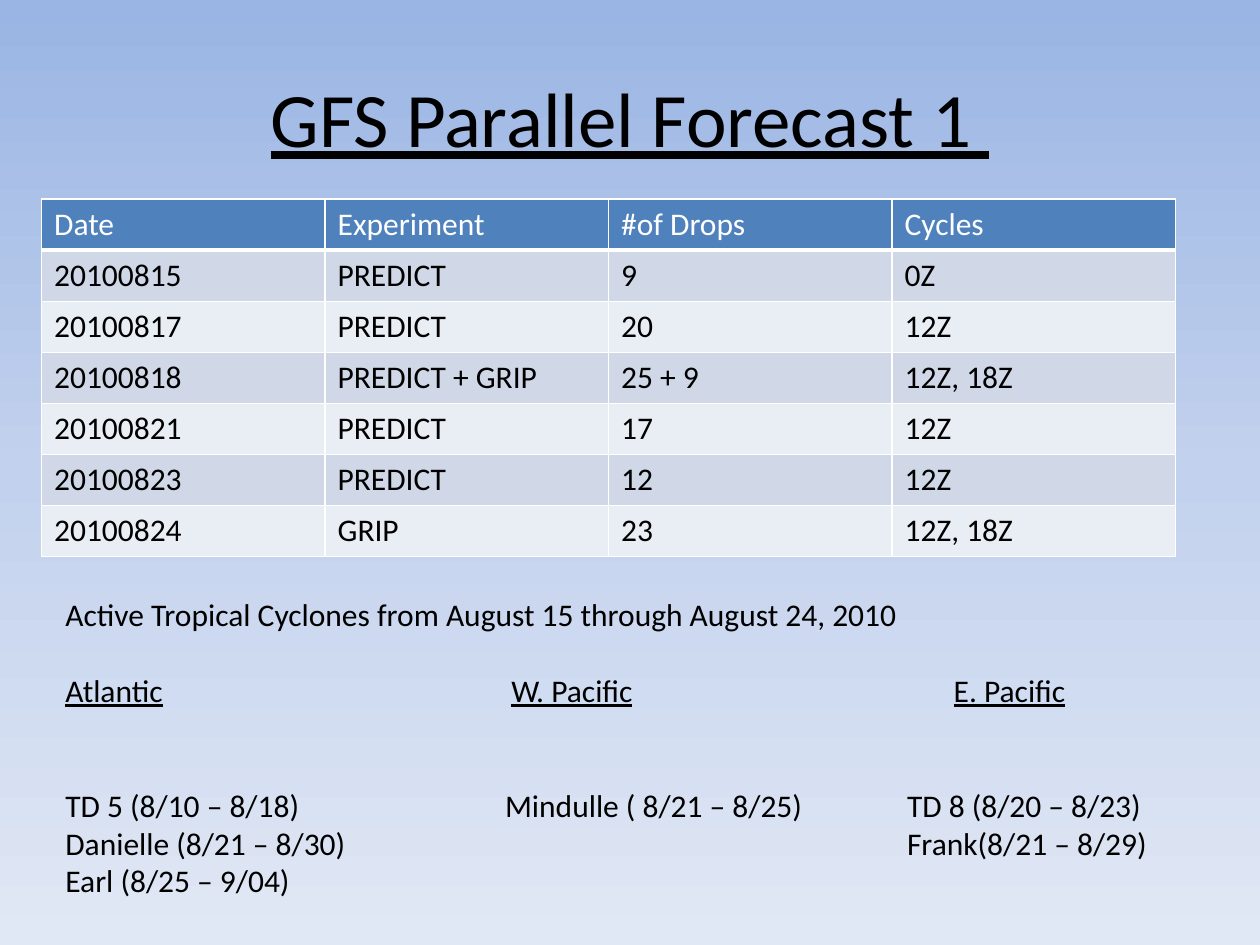
from copy import deepcopy

from lxml.etree import SubElement
from pptx import Presentation
from pptx.dml.color import RGBColor
from pptx.enum.text import MSO_ANCHOR, PP_ALIGN
from pptx.oxml import parse_xml
from pptx.oxml.ns import nsdecls, qn
from pptx.util import Inches, Pt

FONT = "Calibri"
COLORS = {
    "text": "000000", "white": "FFFFFF", "head": "4F81BD",
    "odd": "D0D8E8", "even": "E9EDF4",
}
SKY = [(0, "9AB5E4"), (0.5, "C2D1ED"), (1, "E1E8F5")]
ROWS = [
    ["Date", "Experiment", "#of Drops", "Cycles"],
    ["20100815", "PREDICT", "9", "0Z"],
    ["20100817", "PREDICT", "20", "12Z"],
    ["20100818", "PREDICT + GRIP", "25 + 9", "12Z, 18Z"],
    ["20100821", "PREDICT", "17", "12Z"],
    ["20100823", "PREDICT", "12", "12Z"],
    ["20100824", "GRIP", "23", "12Z, 18Z"],
]
BASINS = ["Atlantic", "W. Pacific", "E. Pacific"]
STORMS = [
    ["TD 5 (8/10 – 8/18)", "Mindulle ( 8/21 – 8/25)", "TD 8 (8/20 – 8/23)"],
    ["Danielle (8/21 – 8/30)", "", "Frank(8/21 – 8/29)"],
    ["Earl (8/25 – 9/04)"],
]
LINE = 22  # height of an 18 pt text line, in points


def add_text(para, text, size=18, color="text", under=False, bold=False):
    run = para.add_run()
    run.text = text
    font = run.font
    font.name, font.size = FONT, Pt(size)
    font.bold, font.underline = bold, under
    font.color.rgb = RGBColor.from_string(COLORS[color])


def add_box(slide, left, top, width, height):
    box = slide.shapes.add_textbox(
        Inches(left), Inches(top), Inches(width), Inches(height))
    box.text_frame.word_wrap = True
    return box.text_frame


def paint_sky(slide):
    fill = slide.background.fill
    fill.gradient()
    fill.gradient_angle = 270
    stops = next(slide.element.iter(qn("a:gsLst")))
    stops.append(deepcopy(stops[-1]))
    for stop, (pos, color) in zip(fill.gradient_stops, SKY):
        stop.position = pos
        stop.color.rgb = RGBColor.from_string(color)


def add_edges(cell, base):
    props = cell._tc.get_or_add_tcPr()
    for i, side in enumerate("LRTB"):
        width = Pt(base if side == "B" else 1)
        props.insert(i, parse_xml(
            f'<a:ln{side} {nsdecls("a")} w="{width}"><a:solidFill>'
            f'<a:srgbClr val="{COLORS["white"]}"/></a:solidFill></a:ln{side}>'))


def add_grid(slide):
    table = slide.shapes.add_table(
        len(ROWS), len(ROWS[0]), Inches(0.33), Inches(1.58),
        Inches(9), Inches(2.84)).table
    for r, row in enumerate(ROWS):
        head = r == 0
        band = "head" if head else "odd" if r % 2 else "even"
        for c, text in enumerate(row):
            cell = table.cell(r, c)
            cell.fill.solid()
            cell.fill.fore_color.rgb = RGBColor.from_string(COLORS[band])
            add_edges(cell, 3 if head else 1)
            add_text(cell.text_frame.paragraphs[0], text,
                     color="white" if head else "text")


def add_row(frame, items, tabs, under=False, gap=0):
    para = frame.add_paragraph()
    para.space_before = Pt(gap)
    stops = SubElement(para._p.get_or_add_pPr(), qn("a:tabLst"))
    for pos in tabs:
        SubElement(stops, qn("a:tab"), pos=str(Inches(pos)), algn="l")
    for i, item in enumerate(items):
        if i:
            add_text(para, "\t")
        if item:
            add_text(para, item, under=under)


def main():
    prs = Presentation()
    prs.slide_width, prs.slide_height = Inches(10), Inches(7.5)
    slide = prs.slides.add_slide(prs.slide_layouts[6])
    paint_sky(slide)

    # Title
    frame = add_box(slide, 0.5, 0.3, 9, 1.25)
    frame.vertical_anchor = MSO_ANCHOR.MIDDLE
    title = frame.paragraphs[0]
    title.alignment = PP_ALIGN.CENTER
    add_text(title, "GFS Parallel Forecast 1 ", size=44, under=True)

    # Drops by date
    add_grid(slide)

    # Storms by basin, in tabbed columns
    frame = add_box(slide, 0.42, 4.67, 8.92, 2.22)
    add_text(frame.paragraphs[0],
             "Active Tropical Cyclones from August 15 through August 24, 2010")
    add_row(frame, BASINS, (3.54, 7.05), under=True, gap=LINE)
    for i, row in enumerate(STORMS):
        add_row(frame, row, (3.49, 6.68), gap=0 if i else 2 * LINE)

    prs.save("out.pptx")


if __name__ == "__main__":
    main()
